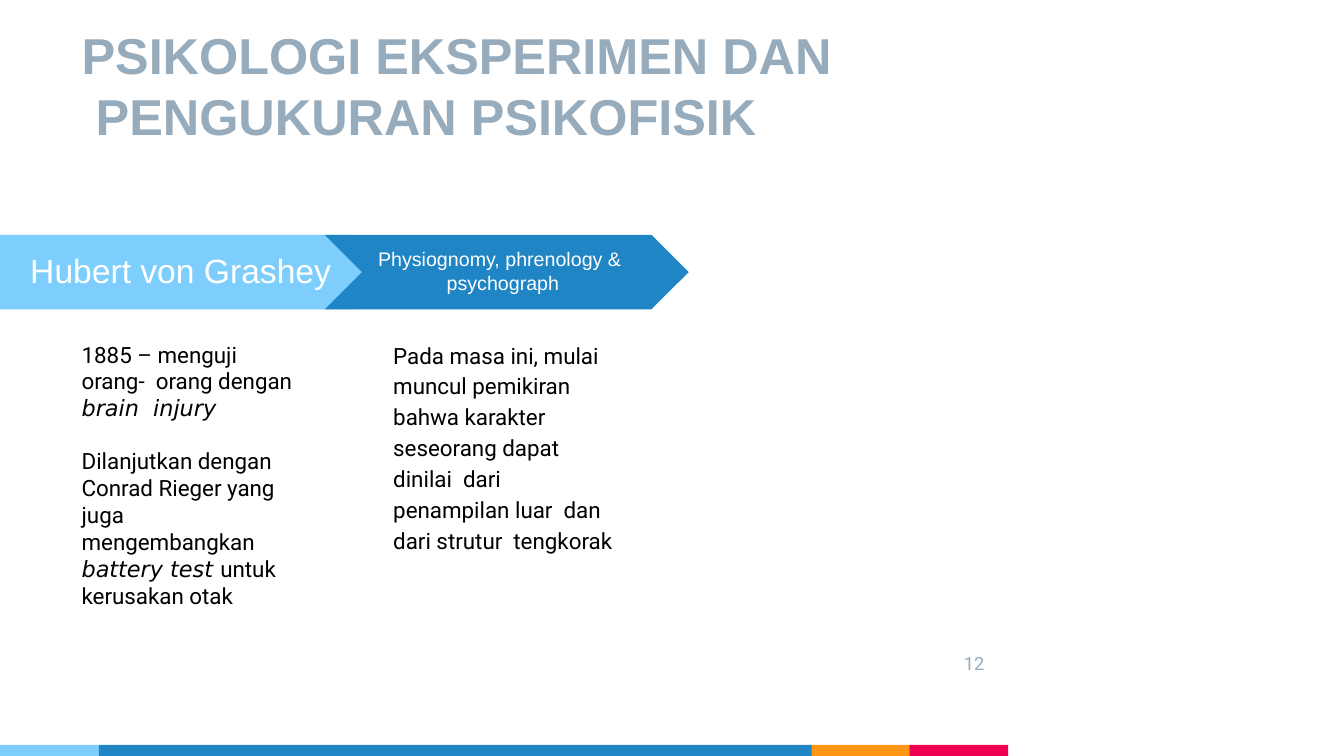
from dataclasses import dataclass

import pptx
import pptx.dml.color
import pptx.enum.shapes
import pptx.enum.text
import pptx.util

RGBColor = pptx.dml.color.RGBColor
Shape = pptx.enum.shapes.MSO_SHAPE
Anchor = pptx.enum.text.MSO_ANCHOR

EMU_PER_PX = 9144  # 100 px to the inch
SLIDE_WIDTH, SLIDE_HEIGHT = 1333, 750

SKY = RGBColor(0x7D, 0xCE, 0xFC)
BLUE = RGBColor(0x20, 0x85, 0xC5)
ORANGE = RGBColor(0xFF, 0x96, 0x15)
PINK = RGBColor(0xF1, 0x01, 0x52)
GREY = RGBColor(0x96, 0xAB, 0xBB)
WHITE = RGBColor(0xFF, 0xFF, 0xFF)
BLACK = RGBColor(0x00, 0x00, 0x00)


@dataclass(frozen=True)
class Block:
    kind: Shape
    left: int
    top: int
    width: int
    height: int
    color: RGBColor


@dataclass(frozen=True)
class Run:
    text: str
    font: str
    italic: bool = False


@dataclass(frozen=True)
class Label:
    left: int
    top: int
    width: int
    height: int
    size: int
    color: RGBColor
    runs: tuple[Run, ...]
    bold: bool = False
    anchor: Anchor = Anchor.TOP
    margin: int = 1
    indent: int = 0
    spacing: float = 1.0


def px(length: int) -> pptx.util.Emu:
    return pptx.util.Emu(length * EMU_PER_PX)


def draw_block(page: pptx.slide.Slide, block: Block) -> None:
    shape = page.shapes.add_shape(
        block.kind, px(block.left), px(block.top), px(block.width), px(block.height))
    shape.shadow.inherit = False
    shape.fill.solid()
    shape.fill.fore_color.rgb = block.color
    shape.line.fill.background()


def draw_label(page: pptx.slide.Slide, label: Label) -> None:
    box = page.shapes.add_textbox(
        px(label.left), px(label.top), px(label.width), px(label.height))
    frame_format = {
        "word_wrap": True,
        "vertical_anchor": label.anchor,
        "margin_left": 0,
        "margin_top": px(1),
        "margin_right": 0,
        "margin_bottom": 0,
    }
    for name, value in frame_format.items():
        setattr(box.text_frame, name, value)

    para = box.text_frame.paragraphs[0]
    para.line_spacing = label.spacing
    properties = para._p.get_or_add_pPr()
    properties.set("marL", str(px(label.margin)))
    properties.set("indent", str(px(label.indent)))

    for run in label.runs:
        span = para.add_run()
        span.text = run.text
        font_format = {
            "name": run.font,
            "size": pptx.util.Pt(label.size),
            "bold": label.bold,
            "italic": run.italic,
        }
        for name, value in font_format.items():
            setattr(span.font, name, value)
        span.font.color.rgb = label.color


# Footer stripe, as (left, width, colour)
STRIPE = [
    Block(Shape.RECTANGLE, left, 739, width, 11, color)
    for left, width, color in (
        (804, 98, ORANGE), (902, 98, PINK), (0, 98, SKY), (98, 707, BLUE))
]

# Arrow banners above the two columns
BANNERS = [
    Block(Shape.PENTAGON, 0, 233, 388, 74, SKY),
    Block(Shape.CHEVRON, 322, 233, 361, 74, BLUE),
]

LABELS = [
    # Title and banner captions
    Label(80, 22, 754, 123, 36, GREY,
          (Run("PSIKOLOGI EKSPERIMEN DAN PENGUKURAN PSIKOFISIK", "Arial"),),
          bold=True, anchor=Anchor.MIDDLE, margin=15, indent=-14),
    Label(29, 247, 311, 43, 24, WHITE, (Run("Hubert von Grashey", "Arial"),)),
    Label(374, 244, 257, 50, 14, WHITE,
          (Run("Physiognomy, phrenology & psychograph", "Arial"),),
          margin=69, indent=-68, spacing=1.01),
    # Left column
    Label(80, 337, 221, 83, 16, BLACK,
          (Run("1885 – menguji orang-  orang dengan ", "Roboto"),
           Run("brain  injury", "DejaVu Sans", italic=True))),
    Label(80, 443, 214, 136, 16, BLACK,
          (Run("Dilanjutkan dengan Conrad Rieger yang juga mengembangkan ", "Roboto"),
           Run("battery test ", "DejaVu Sans", italic=True),
           Run("untuk kerusakan otak", "Roboto"))),
    # Right column
    Label(389, 334, 225, 217, 16, BLACK,
          (Run("Pada masa ini, mulai muncul pemikiran bahwa karakter "
               "seseorang dapat dinilai  dari penampilan luar  dan "
               "dari strutur  tengkorak", "Roboto"),),
          spacing=1.15),
    # Page number
    Label(955, 646, 24, 24, 13, GREY, (Run("12", "Roboto"),)),
]


def main() -> None:
    deck = pptx.Presentation()
    deck.slide_width, deck.slide_height = px(SLIDE_WIDTH), px(SLIDE_HEIGHT)
    page = deck.slides.add_slide(deck.slide_layouts[6])
    for block in STRIPE + BANNERS:
        draw_block(page, block)
    for label in LABELS:
        draw_label(page, label)
    deck.save("out.pptx")


if __name__ == "__main__":
    main()
